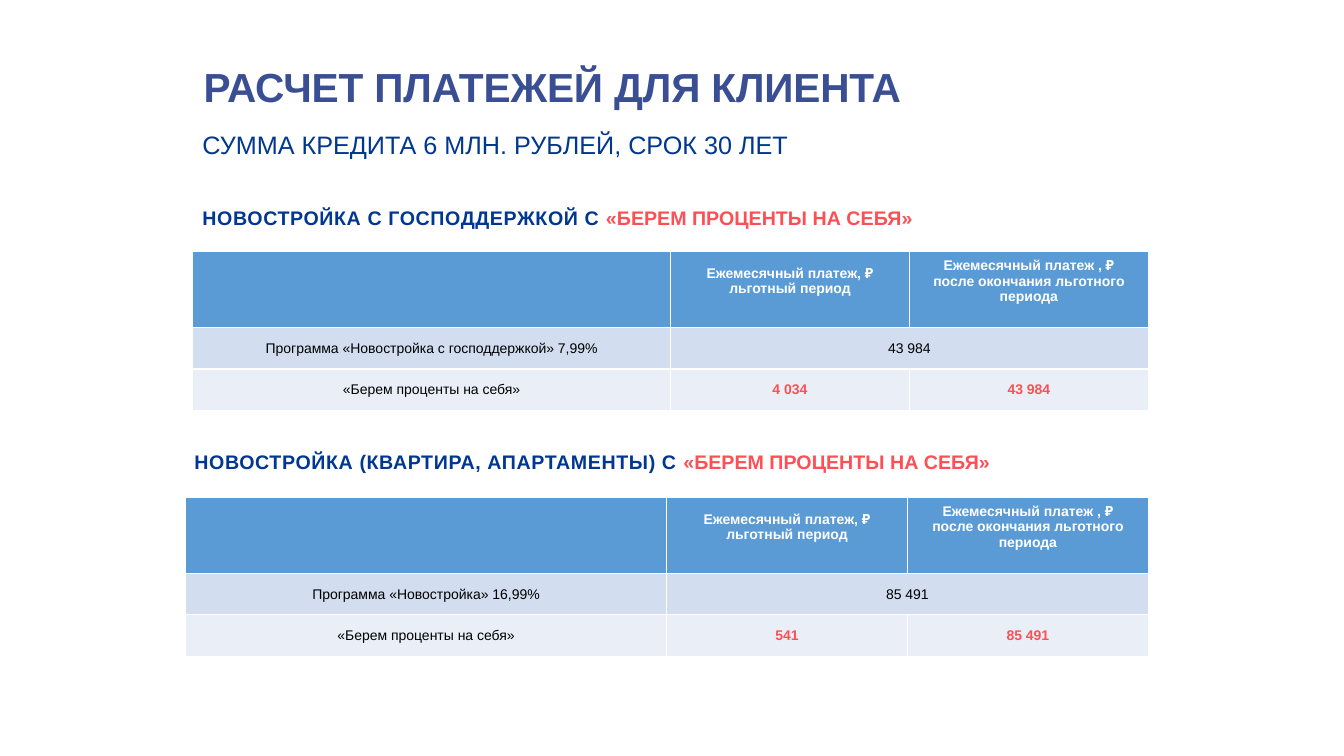
from dataclasses import dataclass

from lxml import etree
from pptx import Presentation
from pptx.dml.color import RGBColor
from pptx.enum.text import MSO_ANCHOR, MSO_AUTO_SIZE, PP_ALIGN
from pptx.oxml.ns import qn
from pptx.util import Inches, Pt

ANCHOR_TOP = MSO_ANCHOR.TOP
ANCHOR_MIDDLE = MSO_ANCHOR.MIDDLE
NO_AUTO_SIZE = MSO_AUTO_SIZE.NONE
LEFT = PP_ALIGN.LEFT
CENTER = PP_ALIGN.CENTER

FONT = "Arial"
TITLE_BLUE = RGBColor(0x3A, 0x4F, 0x93)
NAVY = RGBColor(0x00, 0x37, 0x90)
RED = RGBColor(0xFC, 0x50, 0x55)
WHITE = RGBColor(0xFF, 0xFF, 0xFF)
BLACK = RGBColor(0x00, 0x00, 0x00)
HEADER_FILL = RGBColor(0x5B, 0x9B, 0xD5)
BAND_FILL = RGBColor(0xD2, 0xDE, 0xEF)
LIGHT_FILL = RGBColor(0xEA, 0xEF, 0xF7)

OFFER = "«Берем проценты на себя»"
HEADER = (
    "",
    "Ежемесячный платеж, ₽\vльготный период",
    "Ежемесячный платеж , ₽\vпосле окончания льготного периода",
)
HEADER_HEIGHT = 0.76
ROW_HEIGHT = 0.41
BORDER_TAGS = ("a:lnL", "a:lnR", "a:lnT", "a:lnB")


@dataclass(frozen=True)
class Span:
    text: str
    size: float
    color: RGBColor
    bold: bool = False
    spacing: float = 0


@dataclass(frozen=True)
class Box:
    left: float
    top: float
    width: float
    height: float


@dataclass(frozen=True)
class Offer:
    heading: str
    heading_box: Box
    line_spacing: float
    table_left: float
    table_top: float
    columns: tuple[float, float, float]
    program: str
    payment: str
    reduced_payment: str


OFFERS = (
    Offer("НОВОСТРОЙКА С ГОСПОДДЕРЖКОЙ С ", Box(1.91, 2.02, 10.29, 0.28), 0.9,
          1.91, 2.49, (4.74, 2.37, 2.37),
          "Программа «Новостройка с господдержкой» 7,99%", "43 984", "4 034"),
    Offer("НОВОСТРОЙКА (КВАРТИРА, АПАРТАМЕНТЫ) С ", Box(1.83, 4.41, 8.85, 0.34), 1.0,
          1.84, 4.93, (4.77, 2.39, 2.39),
          "Программа «Новостройка» 16,99%", "85 491", "541"),
)


def format_run(run, span: Span) -> None:
    run.font.name = FONT
    run.font.size = Pt(span.size)
    run.font.bold = span.bold
    run.font.color.rgb = span.color
    if span.spacing:
        run._r.get_or_add_rPr().set("spc", str(round(span.spacing * 100)))


def fill_text_shape(shape, box: Box, spans: tuple[Span, ...], line_spacing: float = 1.0) -> None:
    shape.left, shape.top = Inches(box.left), Inches(box.top)
    shape.width, shape.height = Inches(box.width), Inches(box.height)
    frame = shape.text_frame
    frame.word_wrap = True
    frame.auto_size = NO_AUTO_SIZE
    frame.vertical_anchor = ANCHOR_TOP
    para = frame.paragraphs[0]
    para.alignment = LEFT
    para.line_spacing = line_spacing
    for span in spans:
        run = para.add_run()
        run.text = span.text
        format_run(run, span)


def add_text(page, box: Box, spans: tuple[Span, ...], line_spacing: float = 1.0) -> None:
    shape = page.shapes.add_textbox(0, 0, Inches(1), Inches(1))
    fill_text_shape(shape, box, spans, line_spacing)


def add_borders(cell) -> None:
    properties = cell._tc.get_or_add_tcPr()
    for index, tag in enumerate(BORDER_TAGS):
        line = etree.Element(qn(tag), w=str(Pt(1)))
        solid = etree.SubElement(line, qn("a:solidFill"))
        etree.SubElement(solid, qn("a:srgbClr"), val=str(WHITE))
        properties.insert(index, line)


def format_cell(cell, text: str, fill: RGBColor, color: RGBColor, bold: bool) -> None:
    cell.fill.solid()
    cell.fill.fore_color.rgb = fill
    cell.vertical_anchor = ANCHOR_MIDDLE
    if fill == HEADER_FILL:
        cell.margin_bottom = Inches(0.21)
    add_borders(cell)
    para = cell.text_frame.paragraphs[0]
    para.alignment = CENTER
    if text:
        para.text = text
        for run in para.runs:
            format_run(run, Span(text, 10, color, bold))


def add_payment_table(page, offer: Offer) -> None:
    rows = (
        (HEADER, HEADER_FILL, WHITE, True),
        ((offer.program, offer.payment, ""), BAND_FILL, BLACK, False),
        ((OFFER, offer.reduced_payment, offer.payment), LIGHT_FILL, RED, True),
    )
    heights = (HEADER_HEIGHT, ROW_HEIGHT, ROW_HEIGHT)
    table = page.shapes.add_table(
        len(rows), len(HEADER), Inches(offer.table_left), Inches(offer.table_top),
        Inches(sum(offer.columns)), Inches(sum(heights)),
    ).table
    for column, width in zip(table.columns, offer.columns):
        column.width = Inches(width)
    for row, height in zip(table.rows, heights):
        row.height = Inches(height)
    for row_index, (texts, fill, color, bold) in enumerate(rows):
        for column_index, text in enumerate(texts):
            is_label = row_index > 0 and column_index == 0
            format_cell(table.cell(row_index, column_index), text, fill,
                        BLACK if is_label else color, bold and not is_label)
    table.cell(1, 1).merge(table.cell(1, 2))


def main() -> None:
    deck = Presentation()
    deck.slide_width, deck.slide_height = Inches(13.33), Inches(7.5)
    page = deck.slides.add_slide(deck.slide_layouts[5])
    fill_text_shape(page.shapes.title, Box(1.92, 0.62, 7.91, 0.74),
                    (Span("РАСЧЕТ ПЛАТЕЖЕЙ ДЛЯ КЛИЕНТА", 29, TITLE_BLUE, True, -0.13),), 0.9)
    add_text(page, Box(1.91, 1.23, 10.07, 0.4),
             (Span("СУММА КРЕДИТА 6 МЛН. РУБЛЕЙ, СРОК 30 ЛЕТ", 18, NAVY),))
    for offer in OFFERS:
        heading = (Span(offer.heading, 14, NAVY, True, 0.43), Span(OFFER.upper(), 14, RED, True))
        add_text(page, offer.heading_box, heading, offer.line_spacing)
        add_payment_table(page, offer)
    deck.save("out.pptx")


if __name__ == "__main__":
    main()
